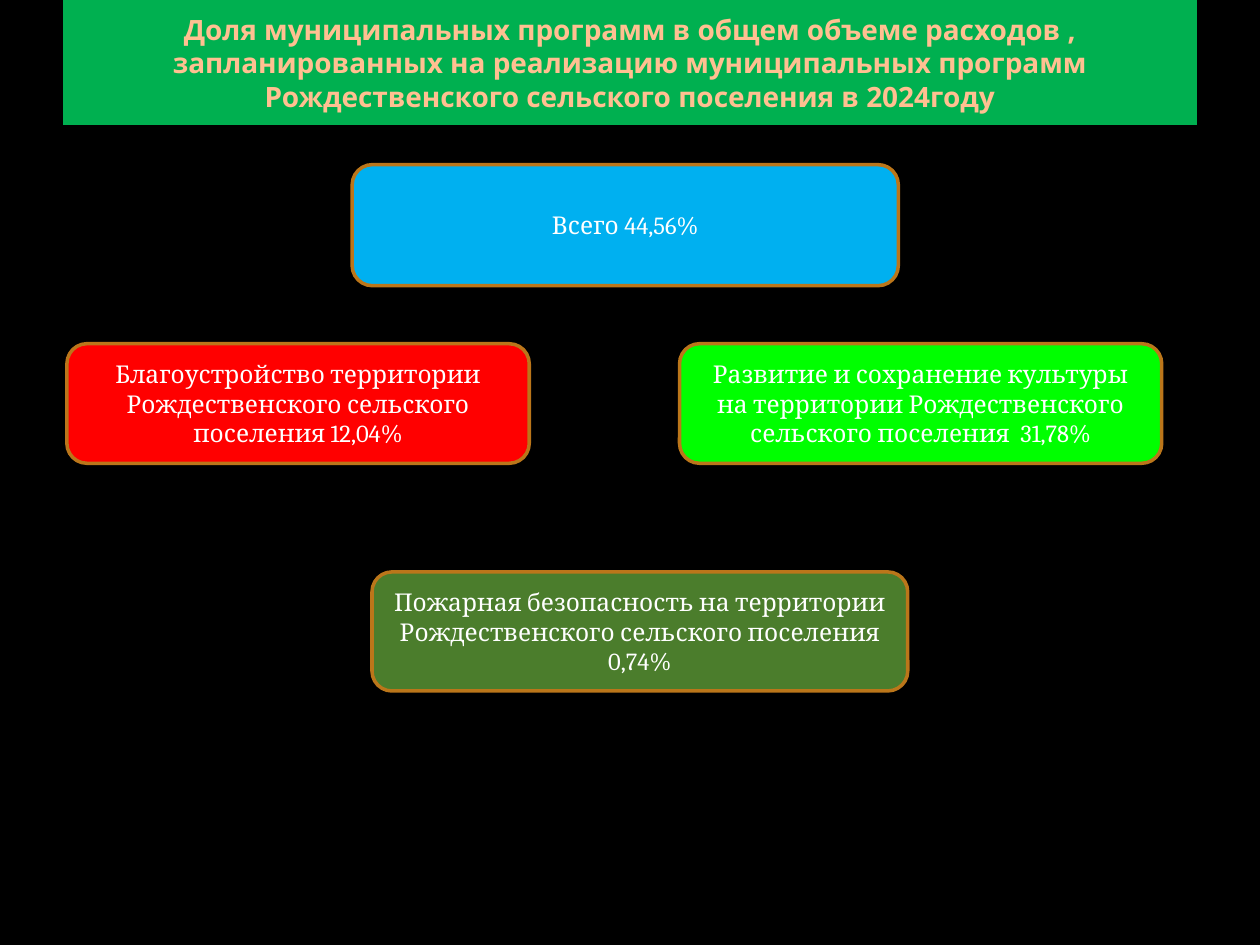
import pptx
import pptx.dml.color
import pptx.enum.shapes
import pptx.enum.text
import pptx.util
from pptx.util import Cm


def color(hex_string):
    return pptx.dml.color.RGBColor.from_string(hex_string)


def write_centered(shape, text, font_name, size, hex_string, bold=False):
    frame = shape.text_frame
    frame.word_wrap = True
    frame.auto_size = pptx.enum.text.MSO_AUTO_SIZE.NONE
    frame.vertical_anchor = pptx.enum.text.MSO_ANCHOR.MIDDLE
    frame.text = text
    paragraph = frame.paragraphs[0]
    paragraph.alignment = pptx.enum.text.PP_ALIGN.CENTER
    paragraph.font.name = font_name
    paragraph.font.size = pptx.util.Pt(size)
    paragraph.font.bold = bold
    paragraph.font.color.rgb = color(hex_string)


presentation = pptx.Presentation()
presentation.slide_width = Cm(25.4)
presentation.slide_height = Cm(19.05)
slide = presentation.slides.add_slide(presentation.slide_layouts[5])
slide.background.fill.solid()
slide.background.fill.fore_color.rgb = color("000000")

title = slide.shapes.title
title.left, title.top, title.width, title.height = Cm(1.27), Cm(0), Cm(22.86), Cm(2.52)
title.fill.solid()
title.fill.fore_color.rgb = color("00B050")
write_centered(
    title,
    "Доля муниципальных программ в общем объеме расходов , запланированных на "
    "реализацию муниципальных программ Рождественского сельского поселения в 2024году",
    "Noto Sans", 16, "FFC091", bold=True,
)

# Left, top, width and height in centimetres, then fill and text
programs = [
    (1.35, 6.93, 9.32, 2.41, "FF0000",
     "Благоустройство территории Рождественского сельского поселения 12,04%"),
    (13.7, 6.93, 9.72, 2.41, "00FF00",
     "Развитие и сохранение культуры на территории Рождественского сельского поселения  31,78%"),
    (7.1, 3.32, 11.01, 2.44, "00B0F0", "Всего 44,56%"),
    (7.5, 11.53, 10.8, 2.4, "4B7D2C",
     "Пожарная безопасность на территории Рождественского сельского поселения 0,74%"),
]
for left, top, width, height, fill, text in programs:
    box = slide.shapes.add_shape(
        pptx.enum.shapes.MSO_SHAPE.ROUNDED_RECTANGLE,
        Cm(left), Cm(top), Cm(width), Cm(height),
    )
    box.shadow.inherit = False
    box.fill.solid()
    box.fill.fore_color.rgb = color(fill)
    box.line.color.rgb = color("BB761A")
    box.line.width = pptx.util.Pt(2)
    write_centered(box, text, "Cambria", 14, "FFFFFF")

presentation.save("out.pptx")
